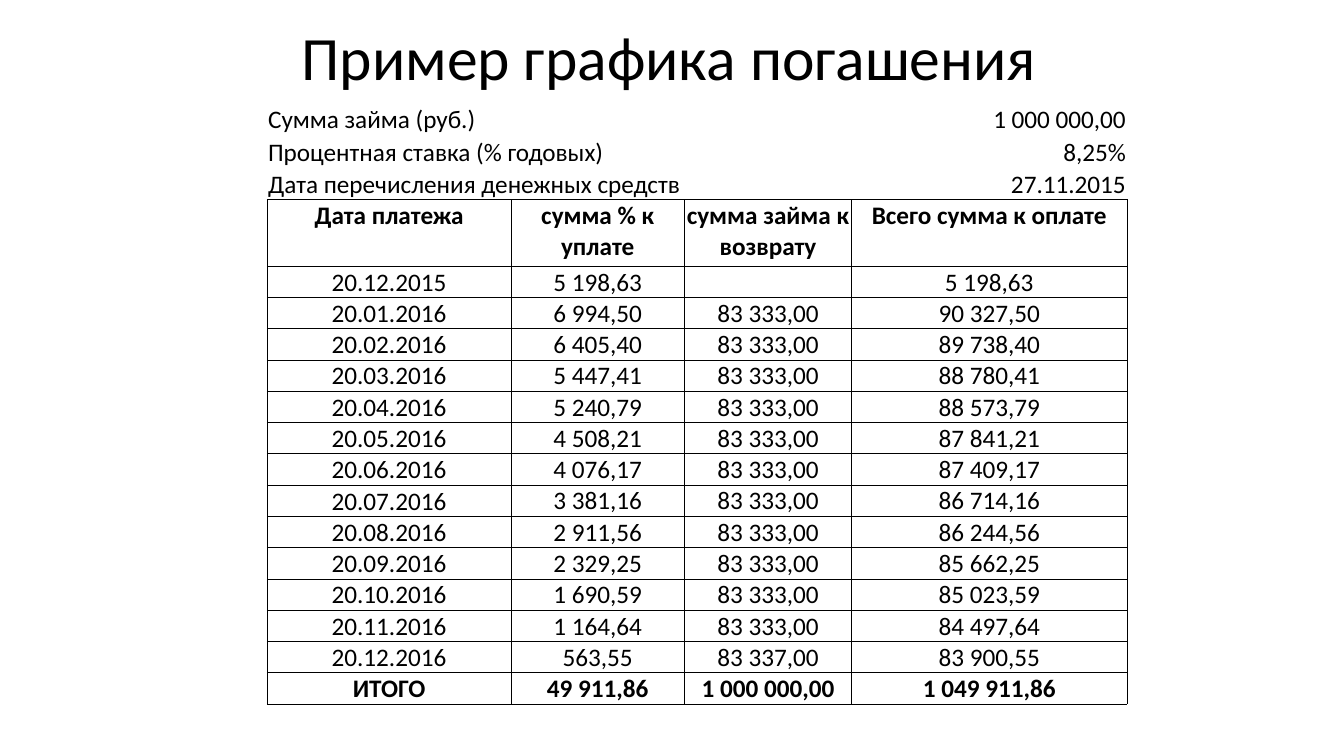
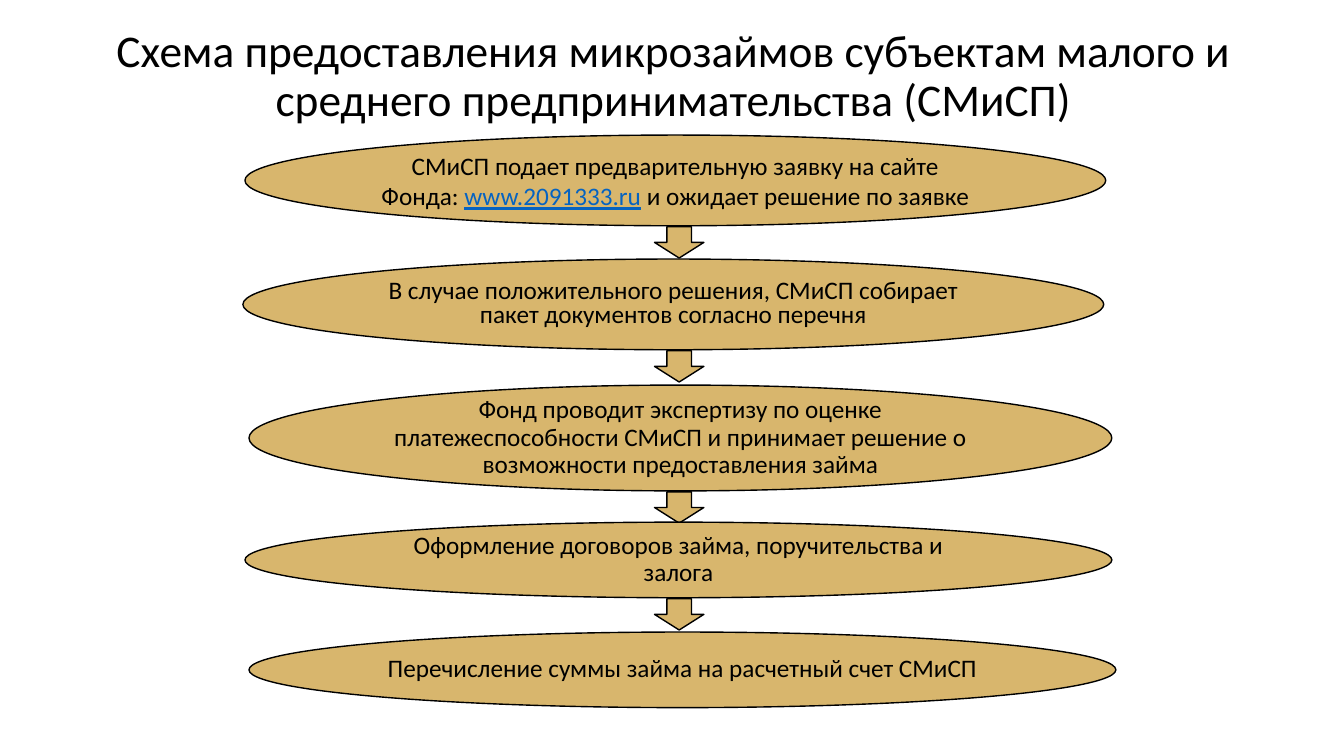
from lxml.etree import SubElement
from pptx import Presentation
from pptx.dml.color import RGBColor
from pptx.enum.shapes import MSO_SHAPE as Preset
from pptx.enum.text import MSO_ANCHOR as Anchor, PP_ALIGN as Align
from pptx.oxml.ns import qn
from pptx.util import Emu, Inches, Pt

GRID_COLUMNS, GRID_ROWS = 40, 30


def color(hex_value):
    return RGBColor.from_string(hex_value)


def apply(target, values):
    for name, value in values.items():
        setattr(target, name, value)


def money(amount):
    return f"{amount:,.2f}".replace(",", " ").replace(".", ",")


class Deck:
    FONT = "Calibri"
    INK, GOLD, LINK = "000000", "D8B66D", "0563C1"
    BODY_SIZE = 18
    BORDER_WIDTH = Pt(0.5)
    CENTERED_BOX = {"word_wrap": True, "vertical_anchor": Anchor.MIDDLE}
    CELL_MARGINS = {
        "margin_left": Inches(0.01),
        "margin_right": Inches(0.01),
        "margin_top": Inches(0.01),
        "margin_bottom": 0,
    }
    PLAIN_TABLE = {"first_row": False, "horz_banding": False}

    def __init__(self):
        self.deck = Presentation()
        apply(self.deck, {"slide_width": Inches(13.33), "slide_height": Inches(7.5)})
        self.slide = None

    def x(self, columns):
        return Emu(round(self.deck.slide_width * columns / GRID_COLUMNS))

    def y(self, rows):
        return Emu(round(self.deck.slide_height * rows / GRID_ROWS))

    def box(self, left, top, width, height):
        return self.x(left), self.y(top), self.x(width), self.y(height)

    def new_slide(self):
        self.slide = self.deck.slides.add_slide(self.deck.slide_layouts[6])

    def put_text(self, frame, runs, size=BODY_SIZE, align=Align.CENTER, spacing=1.0, bold=False):
        """Fill the first paragraph; a run is a text or a (text, is_link) pair."""
        paragraph = frame.paragraphs[0]
        apply(paragraph, {"alignment": align, "line_spacing": spacing})
        for item in [runs] if isinstance(runs, str) else runs:
            text, is_link = (item, False) if isinstance(item, str) else item
            run = paragraph.add_run()
            run.text = text
            apply(run.font, {"name": self.FONT, "size": Pt(size),
                             "bold": bold, "underline": is_link})
            run.font.color.rgb = color(self.LINK if is_link else self.INK)

    def title(self, text, place, size):
        frame = self.slide.shapes.add_textbox(*self.box(*place)).text_frame
        apply(frame, self.CENTERED_BOX)
        self.put_text(frame, text, size, spacing=0.9)

    def gold_shape(self, preset, place):
        shape = self.slide.shapes.add_shape(preset, *self.box(*place))
        shape.shadow.inherit = False
        shape.fill.solid()
        shape.fill.fore_color.rgb = color(self.GOLD)
        shape.line.color.rgb = color(self.INK)
        shape.line.width = Pt(1)
        return shape

    def step(self, runs, place, spacing):
        frame = self.gold_shape(Preset.OVAL, place).text_frame
        apply(frame, self.CENTERED_BOX)
        self.put_text(frame, runs, spacing=spacing)

    def arrow(self, place):
        self.gold_shape(Preset.DOWN_ARROW, place)

    def table(self, left, top, widths, heights):
        place = self.box(left, top, sum(widths), sum(heights))
        table = self.slide.shapes.add_table(len(heights), len(widths), *place).table
        apply(table, self.PLAIN_TABLE)
        for column, width in zip(table.columns, widths):
            column.width = self.x(width)
        for row, height in zip(table.rows, heights):
            row.height = self.y(height)
        return table

    def cell(self, cell, text, borders, anchor=Anchor.BOTTOM, **style):
        """Fill one cell; borders lists the drawn sides out of L, R, T and B."""
        apply(cell, {**self.CELL_MARGINS, "vertical_anchor": anchor})
        properties = cell._tc.get_or_add_tcPr()
        for side in "LRTB":
            line = SubElement(properties, qn(f"a:ln{side}"), w=str(self.BORDER_WIDTH))
            if side in borders:
                fill = SubElement(line, qn("a:solidFill"))
                SubElement(fill, qn("a:srgbClr"), val=self.INK)
            else:
                SubElement(line, qn("a:noFill"))
        cell.fill.background()
        if text:
            self.put_text(cell.text_frame, text, **style)


LOAN_TERMS = [
    ("Сумма займа (руб.)", "1 000 000,00"),
    ("Процентная ставка (% годовых)", "8,25%"),
    ("Дата перечисления денежных средств", "27.11.2015"),
]
HEADINGS = ["Дата платежа", "сумма % к уплате", "сумма займа к возврату", "Всего сумма к оплате"]
INTEREST = [5198.63, 6994.50, 6405.40, 5447.41, 5240.79, 4508.21, 4076.17,
            3381.16, 2911.56, 2329.25, 1690.59, 1164.64, 563.55]
PRINCIPAL = [0] + [83333] * 11 + [83337]
DATES = ["20.12.2015"] + [f"20.{month:02}.2016" for month in range(1, 13)]

# text, left, top, width, height, line spacing
STEPS = [
    (["СМиСП подает предварительную заявку на сайте Фонда: ", ("www.2091333.ru", True),
      " и ожидает решение по заявке"], 7.29, 5.36, 25.62, 3.6, 1.0),
    ("В случае положительного решения, СМиСП собирает пакет документов согласно перечня",
     7.23, 10.28, 25.62, 3.6, 0.8),
    ("Фонд проводит экспертизу по оценке платежеспособности СМиСП и принимает решение "
     "о возможности предоставления займа", 7.41, 15.28, 25.68, 4.2, 0.9),
    ("Оформление договоров займа, поручительства и залога", 7.29, 20.72, 25.8, 3, 0.9),
    ("Перечисление суммы займа на расчетный счет СМиСП", 7.41, 25.08, 25.8, 3, 0.9),
]


def payment_rows():
    rows = [(date, money(interest), money(principal) if principal else "",
             money(interest + principal))
            for date, interest, principal in zip(DATES, INTEREST, PRINCIPAL)]
    interest, principal = sum(INTEREST), sum(PRINCIPAL)
    return [HEADINGS, *rows,
            ("ИТОГО", money(interest), money(principal), money(interest + principal))]


def schedule_slide(deck):
    deck.new_slide()
    deck.title("Пример графика погашения", (2.67, 0.68, 34.5, 3.44), 44)
    payments = payment_rows()
    heights = [1.16, 1.32, 1.16, 2.64] + [1.16] * (len(payments) - 1)
    schedule = deck.table(7.95, 4.12, [7.26, 5.16, 4.98, 8.19], heights)

    last_term = len(LOAN_TERMS) - 1
    for row, (label, value) in enumerate(LOAN_TERMS):
        borders = "B" if row == last_term else ""
        for column, text in enumerate([label, "", "", value]):
            align = Align.RIGHT if column == 3 else Align.LEFT
            deck.cell(schedule.cell(row, column), text, borders, align=align)
        label_end = 2 if row == last_term else 1
        schedule.cell(row, 0).merge(schedule.cell(row, label_end))

    for index, payment in enumerate(payments):
        is_heading = index == 0
        for column, text in enumerate(payment):
            anchor = Anchor.TOP if is_heading or column == 0 else Anchor.BOTTOM
            deck.cell(schedule.cell(len(LOAN_TERMS) + index, column), text, "LRTB", anchor,
                      bold=is_heading or index == len(payments) - 1)


def process_slide(deck):
    deck.new_slide()
    deck.title("Схема предоставления микрозаймов субъектам малого и среднего "
               "предпринимательства (СМиСП)", (2.79, 0.76, 34.5, 4.6), 32.4)
    for index, (runs, left, top, width, height, spacing) in enumerate(STEPS):
        deck.step(runs, (left, top, width, height), spacing)
        if index < len(STEPS) - 1:
            deck.arrow((19.48, top + height + 0.04, 1.47, 1.24))


def main():
    deck = Deck()
    schedule_slide(deck)
    process_slide(deck)
    deck.deck.save("out.pptx")


if __name__ == "__main__":
    main()
